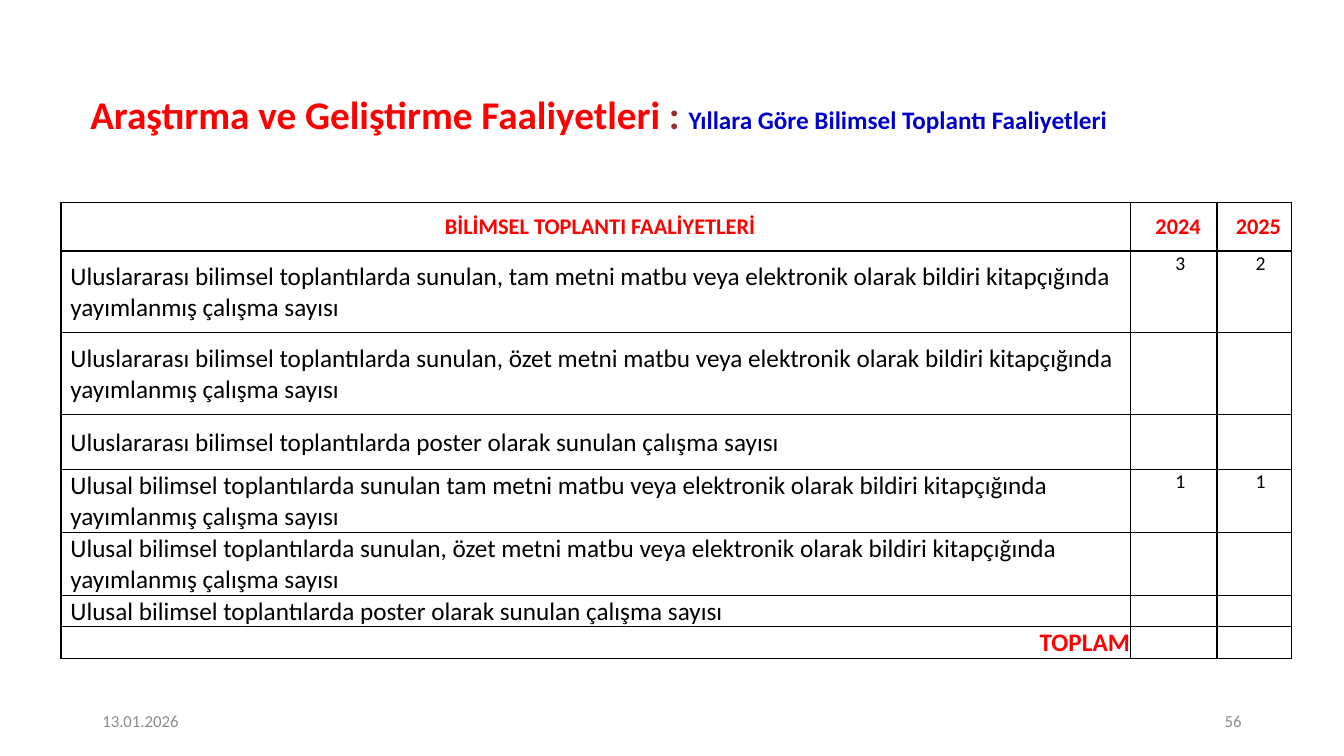
from lxml import etree
from pptx import Presentation
from pptx import util as u
from pptx.dml.color import RGBColor
from pptx.enum import text
from pptx.oxml import ns

PX = 9525
LEFT, CENTER, RIGHT = text.PP_ALIGN.LEFT, text.PP_ALIGN.CENTER, text.PP_ALIGN.RIGHT
RED, BLACK, GREY = "FF0000", "000000", "8C8C8C"


def add_run(paragraph, words, size, color, bold=False):
    run = paragraph.add_run()
    run.text = words
    run.font.name = "Calibri"
    run.font.size = u.Pt(size)
    run.font.bold = bold
    run.font.color.rgb = RGBColor.from_string(color)


def add_line(slide, box, align, runs):
    frame = slide.shapes.add_textbox(*[n * PX for n in box]).text_frame
    frame.word_wrap = True
    frame.vertical_anchor = text.MSO_ANCHOR.MIDDLE
    paragraph = frame.paragraphs[0]
    paragraph.alignment = align
    for run in runs:
        add_run(paragraph, *run)
    return paragraph


prs = Presentation()
prs.slide_width, prs.slide_height = 1280 * PX, 720 * PX
slide = prs.slides.add_slide(prs.slide_layouts[6])

title = add_line(slide, (24, 79, 1098, 65), CENTER, [
    ("Araştırma ve Geliştirme Faaliyetleri ", 28, RED, True),
    (": ", 28, "962E2E", True),
    ("Yıllara Göre Bilimsel Toplantı Faaliyetleri ", 18, "0000CC", True),
])
title.line_spacing = 0.9
add_line(slide, (88, 667, 288, 38), LEFT, [("13.01.2026", 12, GREY)])
add_line(slide, (904, 667, 288, 38), RIGHT, [("56", 12, GREY)])

activities = [
    (46, "BİLİMSEL TOPLANTI FAALİYETLERİ", "2024", "2025"),
    (78, "Uluslararası bilimsel toplantılarda sunulan, tam metni matbu veya elektronik "
         "olarak bildiri kitapçığında yayımlanmış çalışma sayısı", " 3", " 2"),
    (78, "Uluslararası bilimsel toplantılarda sunulan, özet metni matbu veya elektronik "
         "olarak bildiri kitapçığında yayımlanmış çalışma sayısı", "", ""),
    (52, "Uluslararası bilimsel toplantılarda poster olarak sunulan çalışma sayısı", "", ""),
    (60, "Ulusal bilimsel toplantılarda sunulan tam metni matbu veya elektronik "
         "olarak bildiri kitapçığında yayımlanmış çalışma sayısı", " 1", " 1"),
    (60, "Ulusal bilimsel toplantılarda sunulan, özet metni matbu veya elektronik "
         "olarak bildiri kitapçığında yayımlanmış çalışma sayısı", "", ""),
    (30, "Ulusal bilimsel toplantılarda poster olarak sunulan çalışma sayısı", "", ""),
    (30, "TOPLAM", "", ""),
]
widths = [1019, 82, 71]
total_row = len(activities) - 1
table = slide.shapes.add_table(
    len(activities), len(widths), 58 * PX, 193 * PX, sum(widths) * PX,
    sum(activity[0] for activity in activities) * PX).table
table.first_row = table.horz_banding = False
for column, width in zip(table.columns, widths):
    column.width = width * PX

for r, (height, *entries) in enumerate(activities):
    table.rows[r].height = height * PX
    for c, entry in enumerate(entries):
        cell = table.cell(r, c)
        cell.margin_left = cell.margin_right = cell.margin_top = PX
        cell.margin_bottom = 0
        label = r == 0 or c == 0
        cell.vertical_anchor = text.MSO_ANCHOR.MIDDLE if label else text.MSO_ANCHOR.TOP
        for side in ("a:lnL", "a:lnR", "a:lnT", "a:lnB"):
            border = etree.SubElement(cell._tc.get_or_add_tcPr(), ns.qn(side), w="12700")
            fill = etree.SubElement(border, ns.qn("a:solidFill"))
            etree.SubElement(fill, ns.qn("a:srgbClr"), val=BLACK)
        cell.fill.background()
        paragraph = cell.text_frame.paragraphs[0]
        paragraph._p.get_or_add_pPr().set("marL", str(8 * PX))
        if r == 0 or c > 0:
            paragraph.alignment = CENTER
        else:
            paragraph.alignment = RIGHT if r == total_row else LEFT
        strong = r in (0, total_row)
        size = 16 if r == 0 else 18 if c == 0 else 14
        if entry:
            add_run(paragraph, entry, size, RED if strong else BLACK, strong)
        else:
            paragraph.font.size = u.Pt(size)

prs.save("out.pptx")
